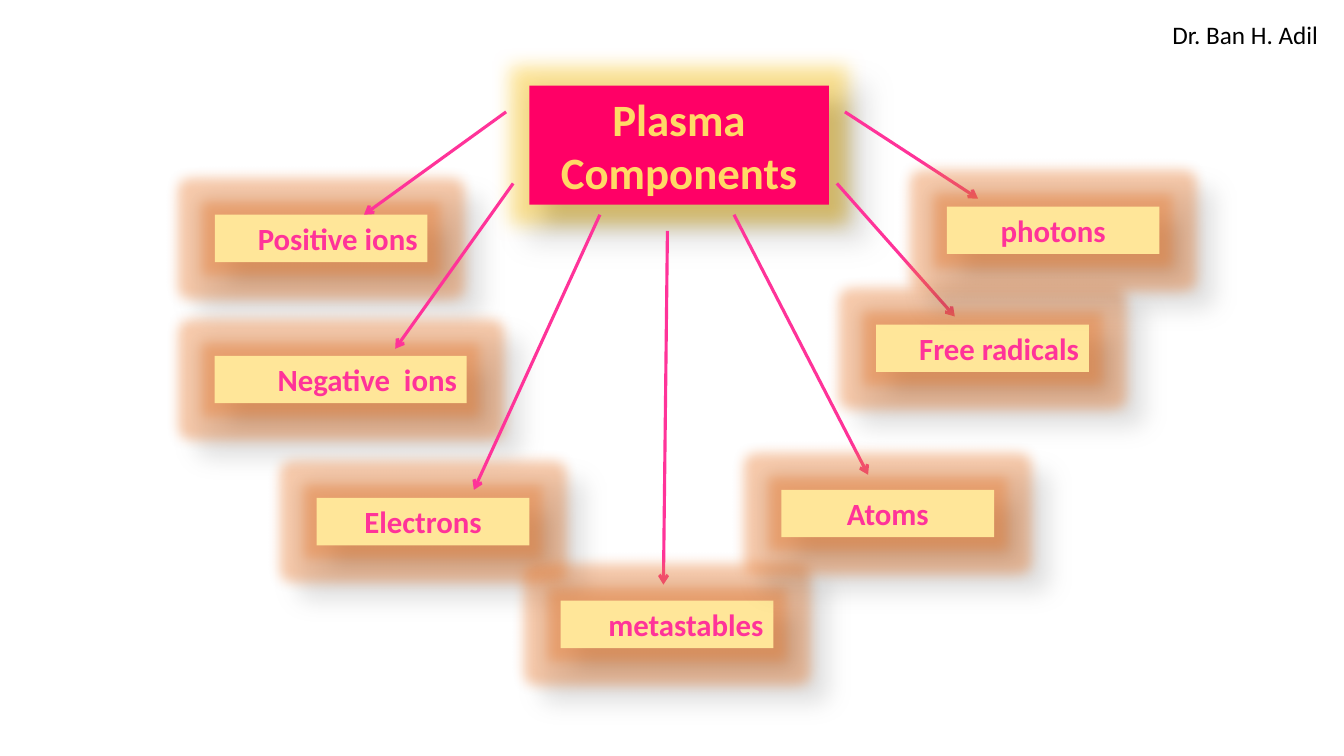
import pptx
import pptx.dml.color
import pptx.enum.shapes
import pptx.enum.text
import pptx.oxml
import pptx.oxml.ns
import pptx.util
from pptx.util import Inches

PINK, CREAM = "FF3399", "FFE699"
LABEL_WIDTH, LABEL_HEIGHT = 2.11, 0.47
ALIGN = pptx.enum.text.PP_ALIGN
DRAWING = pptx.oxml.ns.nsdecls("a")

# text, left, top, width, alignment
LABELS = [
    ("Positive ions", 2.13, 2.13, LABEL_WIDTH, ALIGN.RIGHT),
    ("Negative  ions", 2.13, 3.53, 2.5, ALIGN.RIGHT),
    ("Electrons", 3.14, 4.94, LABEL_WIDTH, ALIGN.CENTER),
    ("metastables", 5.56, 5.96, LABEL_WIDTH, ALIGN.RIGHT),
    ("Atoms", 7.75, 4.86, LABEL_WIDTH, ALIGN.CENTER),
    ("Free radicals", 8.69, 3.22, LABEL_WIDTH, ALIGN.RIGHT),
    ("photons", 9.39, 2.05, LABEL_WIDTH, ALIGN.CENTER),
]
# start x, start y, end x, end y
RIGHT_ARROWS = [
    (7.28, 2.13, 8.61, 4.71),
    (6.62, 2.29, 6.58, 5.8),
    (8.3, 1.82, 9.47, 3.14),
    (8.38, 1.11, 9.7, 1.97),
]
LEFT_ARROWS = [
    (5.02, 1.11, 3.61, 2.13),
    (5.09, 1.82, 3.92, 3.46),
    (5.95, 2.13, 4.7, 4.86),
]


def color(value):
    return pptx.dml.color.RGBColor.from_string(value)


def set_text(shape, text, size, text_color, alignment, bold=True):
    frame = shape.text_frame
    frame.word_wrap = True
    frame.auto_size = pptx.enum.text.MSO_AUTO_SIZE.NONE
    frame.vertical_anchor = pptx.enum.text.MSO_ANCHOR.MIDDLE
    frame.text = text
    para = frame.paragraphs[0]
    para.alignment = alignment
    font = para.runs[0].font
    font.name, font.size, font.bold = "Calibri", pptx.util.Pt(size), bold
    font.color.rgb = color(text_color)


def style_box(shape, fill, glow_color, glow_points):
    """Fill the box and give it a coloured glow and a soft shadow."""
    shape.fill.solid()
    shape.fill.fore_color.rgb = color(fill)
    shape.line.fill.background()
    shape.shadow.inherit = False
    effects = shape._element.spPr.find(pptx.oxml.ns.qn("a:effectLst"))
    effects.append(pptx.oxml.parse_xml(
        f'<a:glow {DRAWING} rad="{pptx.util.Pt(glow_points)}">'
        f'<a:srgbClr val="{glow_color}"><a:alpha val="40000"/></a:srgbClr></a:glow>'))
    effects.append(pptx.oxml.parse_xml(
        f'<a:outerShdw {DRAWING} blurRad="{pptx.util.Pt(15)}" dist="{pptx.util.Pt(18)}" '
        'dir="2700000" sy="90000"><a:srgbClr val="000000"><a:alpha val="30000"/>'
        '</a:srgbClr></a:outerShdw>'))


def add_heading(page, left, top, width, height):
    title = page.shapes.title
    title.left, title.top = Inches(left), Inches(top)
    title.width, title.height = Inches(width), Inches(height)
    style_box(title, "FF0066", "FFC000", 28)
    set_text(title, "Plasma Components", 32, "FFD966", ALIGN.CENTER)


def add_label(page, text, left, top, width, alignment):
    label = page.shapes.add_shape(
        pptx.enum.shapes.MSO_SHAPE.RECTANGLE,
        Inches(left), Inches(top), Inches(width), Inches(LABEL_HEIGHT))
    style_box(label, CREAM, "ED7D31", 18)
    set_text(label, text, 22, PINK, alignment)


def add_arrow(page, *ends):
    arrow = page.shapes.add_connector(
        pptx.enum.shapes.MSO_CONNECTOR.STRAIGHT, *map(Inches, ends))
    arrow.line.color.rgb = color(PINK)
    arrow.line.width = pptx.util.Pt(2.25)
    arrow.line._get_or_add_ln().append(
        pptx.oxml.parse_xml(f'<a:tailEnd {DRAWING} type="arrow"/>'))
    arrow._element.spPr.append(pptx.oxml.parse_xml(f"<a:effectLst {DRAWING}/>"))


def add_author(page, left, top, width, height):
    author = page.shapes.add_textbox(
        Inches(left), Inches(top), Inches(width), Inches(height))
    set_text(author, "Dr. Ban H. Adil", 18, "000000", ALIGN.LEFT, bold=False)
    author.text_frame.word_wrap = False


def main():
    deck = pptx.Presentation()
    deck.slide_width, deck.slide_height = Inches(13.33), Inches(7.5)
    page = deck.slides.add_slide(deck.slide_layouts.get_by_name("Title Only"))
    add_heading(page, 5.25, 0.85, 2.97, 1.18)
    for ends in RIGHT_ARROWS:
        add_arrow(page, *ends)
    for label in LABELS:
        add_label(page, *label)
    for ends in LEFT_ARROWS:
        add_arrow(page, *ends)
    add_author(page, 11.53, 0.14, 1.67, 0.4)
    deck.save("out.pptx")


if __name__ == "__main__":
    main()
